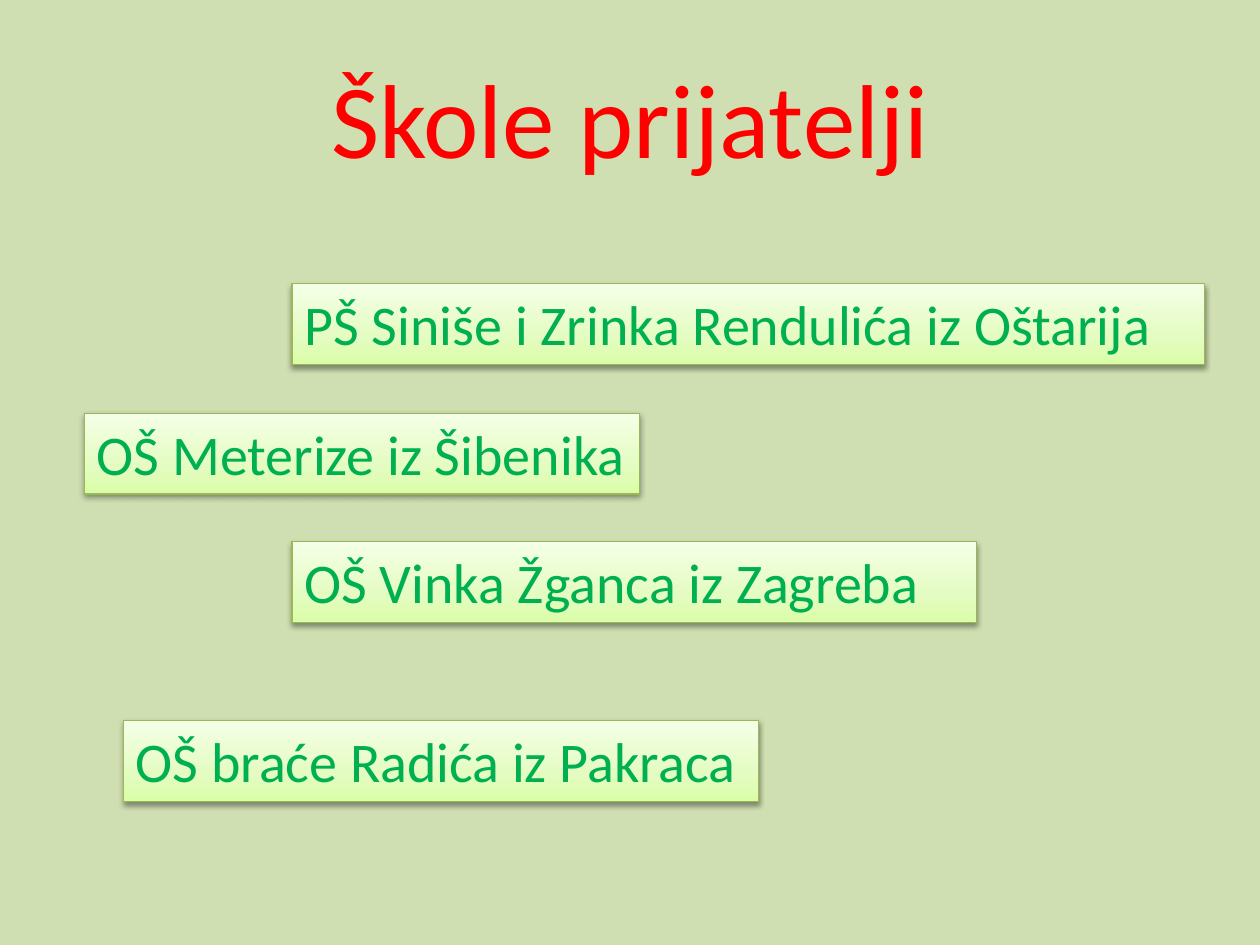
from copy import deepcopy
from dataclasses import dataclass

from lxml.etree import SubElement
from pptx import Presentation
from pptx.dml.color import RGBColor
from pptx.enum.shapes import MSO_SHAPE
from pptx.enum.text import MSO_ANCHOR, MSO_AUTO_SIZE, PP_ALIGN
from pptx.oxml.ns import qn
from pptx.util import Cm, Pt


@dataclass(frozen=True)
class Theme:
    font: str = "Calibri"
    title_size: int = 60
    label_size: int = 32
    background: str = "D0DFB1"
    title: str = "FF0000"
    label: str = "00B050"
    border: str = "98B955"
    shadow: str = "000000"
    gradient: tuple = ((0, "DAFDA7"), (0.35, "E4FCC2"), (1, "F5FFE7"))


@dataclass(frozen=True)
class School:
    name: str
    left: float
    top: float
    width: float


THEME = Theme()
LABEL_HEIGHT = 1.63
SCHOOLS = (
    School("OŠ Meterize iz Šibenika", 1.7, 8.33, 11.2),
    School("OŠ braće Radića iz Pakraca", 2.49, 14.53, 12.8),
    School("OŠ Vinka Žganca iz Zagreba", 5.89, 10.92, 13.79),
    School("PŠ Siniše i Zrinka Rendulića iz Oštarija", 5.89, 5.72, 18.39),
)


def rgb(color: str) -> RGBColor:
    return RGBColor.from_string(color)


def write(tf, text: str, *, size: int, color: str, align, anchor) -> None:
    tf.word_wrap = True
    tf.vertical_anchor = anchor
    p = tf.paragraphs[0]
    p.alignment = align
    r = p.add_run()
    r.text = text
    r.font.name = THEME.font
    r.font.size = Pt(size)
    r.font.color.rgb = rgb(color)


def fill_gradient(sp) -> None:
    sp.fill.gradient()
    sp.fill.gradient_angle = 90
    first = sp._element.spPr.find(".//" + qn("a:gs"))
    first.addnext(deepcopy(first))
    for stop, (position, color) in zip(sp.fill.gradient_stops, THEME.gradient):
        stop.position = position
        stop.color.rgb = rgb(color)


def add_shadow(sp) -> None:
    sp.shadow.inherit = False
    effects = sp._element.spPr.find(qn("a:effectLst"))
    shadow = SubElement(effects, qn("a:outerShdw"), blurRad="40000",
                        dist="20000", dir="5400000", rotWithShape="0")
    color = SubElement(shadow, qn("a:srgbClr"), val=THEME.shadow)
    SubElement(color, qn("a:alpha"), val="38000")


def add_school(s, school: School) -> None:
    sp = s.shapes.add_shape(MSO_SHAPE.RECTANGLE, Cm(school.left), Cm(school.top),
                            Cm(school.width), Cm(LABEL_HEIGHT))
    fill_gradient(sp)
    sp.line.color.rgb = rgb(THEME.border)
    sp.line.width = Pt(0.75)
    add_shadow(sp)
    write(sp.text_frame, school.name, size=THEME.label_size, color=THEME.label,
          align=PP_ALIGN.LEFT, anchor=MSO_ANCHOR.TOP)
    sp.text_frame.auto_size = MSO_AUTO_SIZE.SHAPE_TO_FIT_TEXT


def add_title(s, text: str) -> None:
    sp = s.shapes.title
    sp.left, sp.top, sp.width, sp.height = Cm(1.27), Cm(0.76), Cm(22.86), Cm(3.18)
    write(sp.text_frame, text, size=THEME.title_size, color=THEME.title,
          align=PP_ALIGN.CENTER, anchor=MSO_ANCHOR.MIDDLE)


def main() -> None:
    prs = Presentation()
    prs.slide_width, prs.slide_height = Cm(25.4), Cm(19.05)
    s = prs.slides.add_slide(prs.slide_layouts[5])
    s.background.fill.solid()
    s.background.fill.fore_color.rgb = rgb(THEME.background)
    add_title(s, "Škole prijatelji")
    for school in SCHOOLS:
        add_school(s, school)
    prs.save("out.pptx")


if __name__ == "__main__":
    main()
